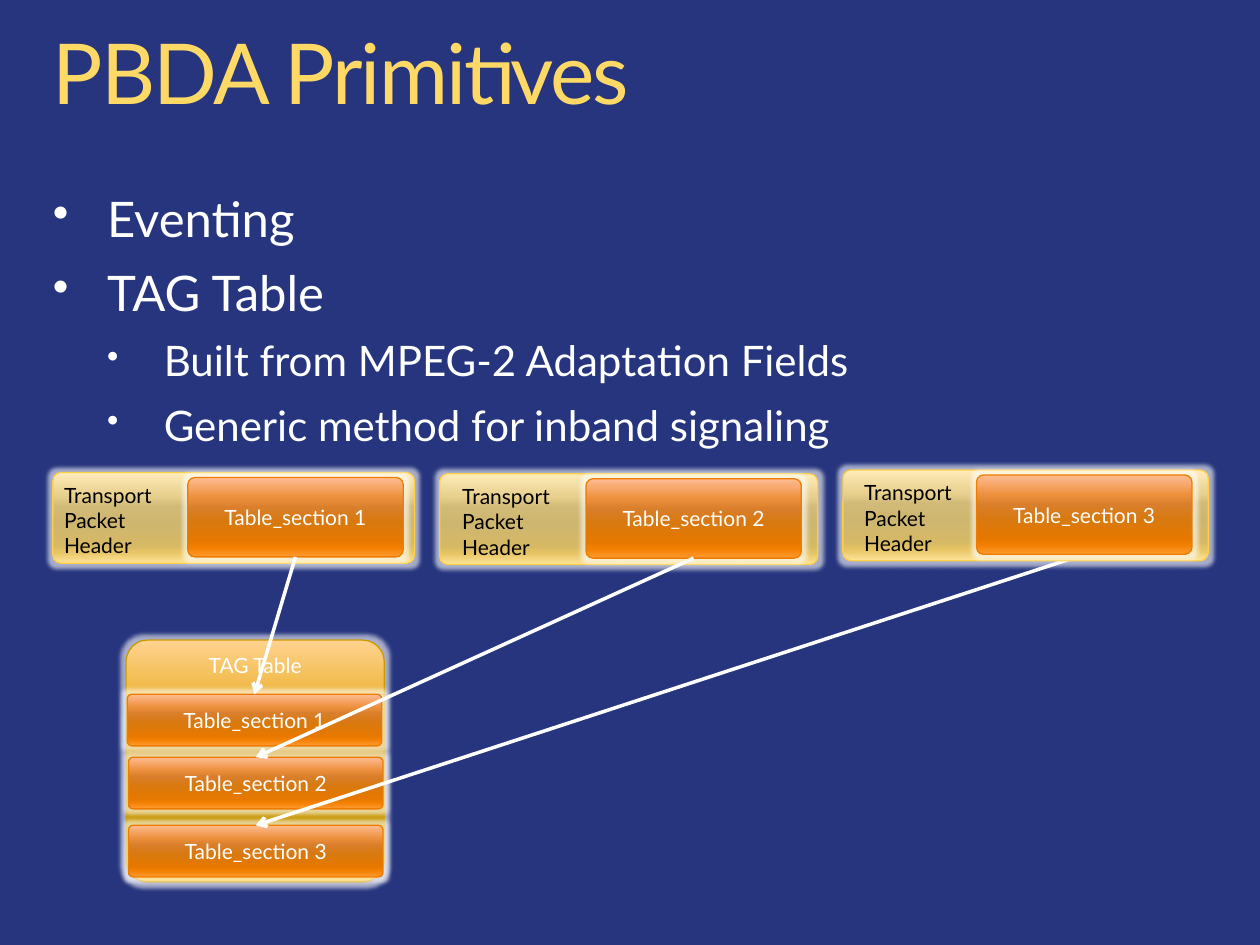
"""Build the PBDA Primitives slide with its packet and TAG table diagram."""
from typing import NamedTuple

from lxml import etree
from pptx import Presentation, util as u
from pptx.dml.color import RGBColor
from pptx.enum import shapes, text
from pptx.oxml.ns import qn

FONT = "Lato"
WHITE = "FFFFFF"
STOPS = (0, 25, 38, 55, 80, 88, 100)


class Style(NamedTuple):
    colors: str
    line: str


class Packet(NamedTuple):
    left: float
    top: float
    width: float
    section_left: float
    label_left: float


class Row(NamedTuple):
    left: float
    top: float


class Bullet(NamedTuple):
    words: str
    level: int


class Level(NamedTuple):
    size: int
    margin: float
    hanging: float
    before: float
    bullet_pct: int


CREAM = Style("FFECBA E8D08E D1B977 CEB670 D6B965 E7C565 FFE498", "FFCF46")
ORANGE = Style("FFBC93 EC903D D97E2B D8790F E67800 F27F00 FF9A2E", "ED7C00")
GOLD = Style("FFD390 ECB335 DAA123 C89600 C69500 D19D00 FFC018", "CC9A00")
PACKETS = (
    Packet(0.42, 3.75, 2.87, 1.49, 0.41),
    Packet(3.49, 3.76, 3, 4.65, 3.57),
    Packet(6.69, 3.73, 2.9, 7.75, 6.76),
)
ROWS = (Row(1.01, 5.51), Row(1.02, 6.01), Row(1.02, 6.55))
LEVELS = (Level(28, 0.43, 0.43, 11.7, 95), Level(24, 0.88, 0.45, 10.8, 80))
BULLETS = (
    Bullet("Eventing", 0),
    Bullet("TAG Table", 0),
    Bullet("Built from MPEG-2 Adaptation Fields", 1),
    Bullet("Generic method for inband signaling", 1),
)


def rgb(value: str) -> RGBColor:
    return RGBColor.from_string(value)


def add_node(parent, tag: str, **attrs: str):
    return etree.SubElement(parent, qn(tag), attrs)


def set_font(p, size: float, color: str) -> None:
    p.font.name = FONT
    p.font.size = u.Pt(size)
    p.font.color.rgb = rgb(color)


def add_text(s, left: float, top: float, width: float, height: float, inset: bool = False):
    box = s.shapes.add_textbox(*map(u.Inches, (left, top, width, height)))
    tf = box.text_frame
    tf.word_wrap = True
    if not inset:
        tf.margin_left = tf.margin_right = tf.margin_top = tf.margin_bottom = 0
    return tf


def add_box(s, style: Style, left: float, top: float, width: float, height: float,
            words: str = "", anchor=text.MSO_ANCHOR.MIDDLE):
    sp = s.shapes.add_shape(shapes.MSO_SHAPE.ROUNDED_RECTANGLE,
                            *map(u.Inches, (left, top, width, height)))
    sp.adjustments[0] = 0.09
    sp.fill.gradient()
    sp.fill.gradient_angle = 270
    stops = sp._element.spPr.find(".//" + qn("a:gsLst"))
    for old in list(stops):
        stops.remove(old)
    for pos, color in zip(STOPS, style.colors.split()):
        add_node(add_node(stops, "a:gs", pos=str(pos * 1000)), "a:srgbClr", val=color)
    sp.line.color.rgb = rgb(style.line)
    sp.line.width = u.Pt(0.75)
    sp.shadow.inherit = False
    glow = add_node(sp._element.spPr.find(qn("a:effectLst")), "a:glow", rad="63500")
    add_node(add_node(glow, "a:srgbClr", val=WHITE), "a:alpha", val="60000")
    if words:
        tf = sp.text_frame
        tf.word_wrap = True
        tf.vertical_anchor = anchor
        p = tf.paragraphs[0]
        p.text = words
        p.alignment = text.PP_ALIGN.CENTER
        set_font(p, 12, WHITE)
    return sp


def add_packet(s, packet: Packet, words: str):
    frame = add_box(s, CREAM, packet.left, packet.top, packet.width, 0.72)
    section = add_box(s, ORANGE, packet.section_left, packet.top + 0.04, 1.71, 0.63, words)
    p = add_text(s, packet.label_left, packet.top + 0.03, 1.02, 0.71, inset=True).paragraphs[0]
    p.text = "Transport Packet Header"
    set_font(p, 12, "000000")
    return frame, section


def add_arrow(s, start, end):
    c = s.shapes.add_connector(shapes.MSO_CONNECTOR.STRAIGHT, 0, 0, 0, 0)
    c.begin_connect(start, 2)
    c.end_connect(end, 0)
    c.line.color.rgb = rgb(WHITE)
    c.line.width = u.Pt(2)
    add_node(c.line._get_or_add_ln(), "a:tailEnd", type="arrow")
    add_node(c._element.spPr, "a:effectLst")
    return c


def add_title(s, words: str) -> None:
    p = add_text(s, 0.42, 0.25, 9.16, 0.73).paragraphs[0]
    r = p.add_run()
    r.text = words
    r._r.get_or_add_rPr().set("spc", "-120")
    p.line_spacing = 0.9
    set_font(p, 48, "FFD966")


def add_bullets(s) -> None:
    tf = add_text(s, 0.42, 1.55, 9.16, 2.05)
    for i, bullet in enumerate(BULLETS):
        p = tf.add_paragraph() if i else tf.paragraphs[0]
        level = LEVELS[bullet.level]
        p.text = bullet.words
        p.level = bullet.level
        p.line_spacing = 0.9
        p.space_before = u.Pt(level.before if i else 0)
        pPr = p._p.get_or_add_pPr()
        pPr.set("marL", str(u.Inches(level.margin)))
        pPr.set("indent", str(-u.Inches(level.hanging)))
        add_node(add_node(pPr, "a:buClr"), "a:srgbClr", val=WHITE)
        add_node(pPr, "a:buSzPct", val=str(level.bullet_pct * 1000))
        add_node(pPr, "a:buChar", char="•")
        set_font(p, level.size, WHITE)


def main() -> None:
    prs = Presentation()
    prs.slide_width, prs.slide_height = u.Inches(10), u.Inches(7.5)
    s = prs.slides.add_slide(prs.slide_layouts[6])
    s.background.fill.solid()
    s.background.fill.fore_color.rgb = rgb("26357E")
    add_title(s, "PBDA Primitives")
    add_bullets(s)

    names = [f"Table_section {n}" for n in range(1, len(ROWS) + 1)]
    add_box(s, GOLD, 1, 5.08, 2.05, 1.92, "TAG Table", text.MSO_ANCHOR.TOP)
    rows = [add_box(s, ORANGE, row.left, row.top, 2.02, 0.41, name)
            for row, name in zip(ROWS, names)]
    packets = [add_packet(s, packet, name) for packet, name in zip(PACKETS, names)]
    arrows = [add_arrow(s, section, row) for (_, section), row in zip(packets, rows)]
    last_frame = packets[-1][0]
    last_frame._element.addprevious(arrows[-1]._element)
    prs.save("out.pptx")


if __name__ == "__main__":
    main()
